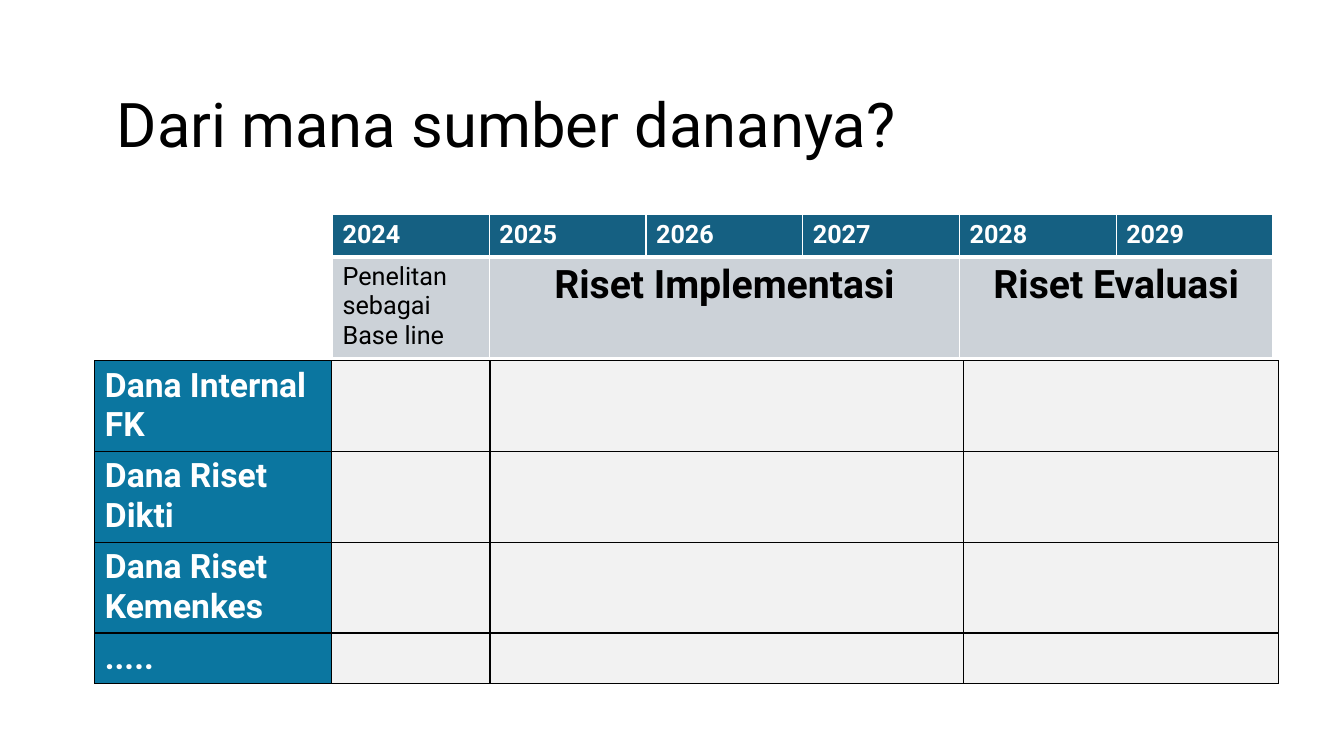
import pptx
import pptx.dml.color
import pptx.enum.text
import pptx.oxml
import pptx.oxml.ns
import pptx.util
from pptx.util import Cm, Pt

TITLE = "Dari mana sumber dananya?"
YEARS = ["2024", "2025", "2026", "2027", "2028", "2029"]
PHASES = [
    ("Penelitan sebagai Base line", 0, 1),
    ("Riset Implementasi", 1, 3),
    ("Riset Evaluasi", 4, 2),
]
FUNDS = ["Dana Internal FK", "Dana Riset Dikti", "Dana Riset Kemenkes", "....."]

FONT = "Roboto"
COLORS = {
    "white": "FFFFFF",
    "black": "000000",
    "year": "156082",
    "phase": "CCD2D8",
    "fund": "0B76A0",
    "empty": "F2F2F2",
}
YEAR_WIDTHS = [3.95] * len(YEARS)
YEAR_HEIGHTS = [1.06, 2.49]
FUND_WIDTHS = [5.97, 3.99, 11.94, 7.92]
FUND_HEIGHTS = [2.25] * 3 + [1.24]


def rgb(name):
    return pptx.dml.color.RGBColor.from_string(COLORS[name])


def write(text_frame, text, size, color, bold=False, centered=False):
    paragraph = text_frame.paragraphs[0]
    paragraph.text = text
    paragraph.font.name = FONT
    paragraph.font.size = Pt(size)
    paragraph.font.bold = bold
    paragraph.font.color.rgb = rgb(color)
    if centered:
        paragraph.alignment = pptx.enum.text.PP_ALIGN.CENTER
    return paragraph


def style_cell(cell, fill, border, widths=(1, 1, 1, 1)):
    cell.fill.solid()
    cell.fill.fore_color.rgb = rgb(fill)
    properties = cell._tc.get_or_add_tcPr()
    for index, (side, width) in enumerate(zip("LRTB", widths)):
        line = pptx.oxml.parse_xml(
            f'<a:ln{side} {pptx.oxml.ns.nsdecls("a")} w="{Pt(width)}"><a:solidFill>'
            f'<a:srgbClr val="{COLORS[border]}"/></a:solidFill></a:ln{side}>'
        )
        properties.insert(index, line)


def add_grid(slide, left, top, widths, heights):
    frame = slide.shapes.add_table(
        len(heights), len(widths), Cm(left), Cm(top), Cm(sum(widths)), Cm(sum(heights))
    )
    for column, width in zip(frame.table.columns, widths):
        column.width = Cm(width)
    for row, height in zip(frame.table.rows, heights):
        row.height = Cm(height)
    return frame.table


def add_title(slide):
    box = slide.shapes.add_textbox(Cm(2.69), Cm(1.37), Cm(29.21), Cm(3.68))
    box.text_frame.word_wrap = True
    box.text_frame.vertical_anchor = pptx.enum.text.MSO_ANCHOR.MIDDLE
    write(box.text_frame, TITLE, 44, "black").line_spacing = 0.9


def add_timeline(slide):
    table = add_grid(slide, 8.38, 5.41, YEAR_WIDTHS, YEAR_HEIGHTS)
    for column, year in enumerate(YEARS):
        style_cell(table.cell(0, column), "year", "white", (1, 1, 1, 3))
        style_cell(table.cell(1, column), "phase", "white", (1, 1, 3, 1))
        write(table.cell(0, column).text_frame, year, 18, "white", bold=True)
    for phase, first, span in PHASES:
        cell = table.cell(1, first)
        wide = span > 1
        if wide:
            cell.merge(table.cell(1, first + span - 1))
        write(cell.text_frame, phase, 28 if wide else 18, "black", wide, wide)


def add_funding(slide):
    table = add_grid(slide, 2.39, 9.09, FUND_WIDTHS, FUND_HEIGHTS)
    for row, fund in enumerate(FUNDS):
        for column in range(len(FUND_WIDTHS)):
            style_cell(table.cell(row, column), "empty" if column else "fund", "black")
        write(table.cell(row, 0).text_frame, fund, 24, "white", bold=True)


def main():
    """Build the funding source slide."""
    presentation = pptx.Presentation()
    presentation.slide_width = Cm(33.87)
    presentation.slide_height = Cm(19.05)
    slide = presentation.slides.add_slide(presentation.slide_layouts[6])
    add_title(slide)
    add_timeline(slide)
    add_funding(slide)
    presentation.save("out.pptx")


if __name__ == "__main__":
    main()
